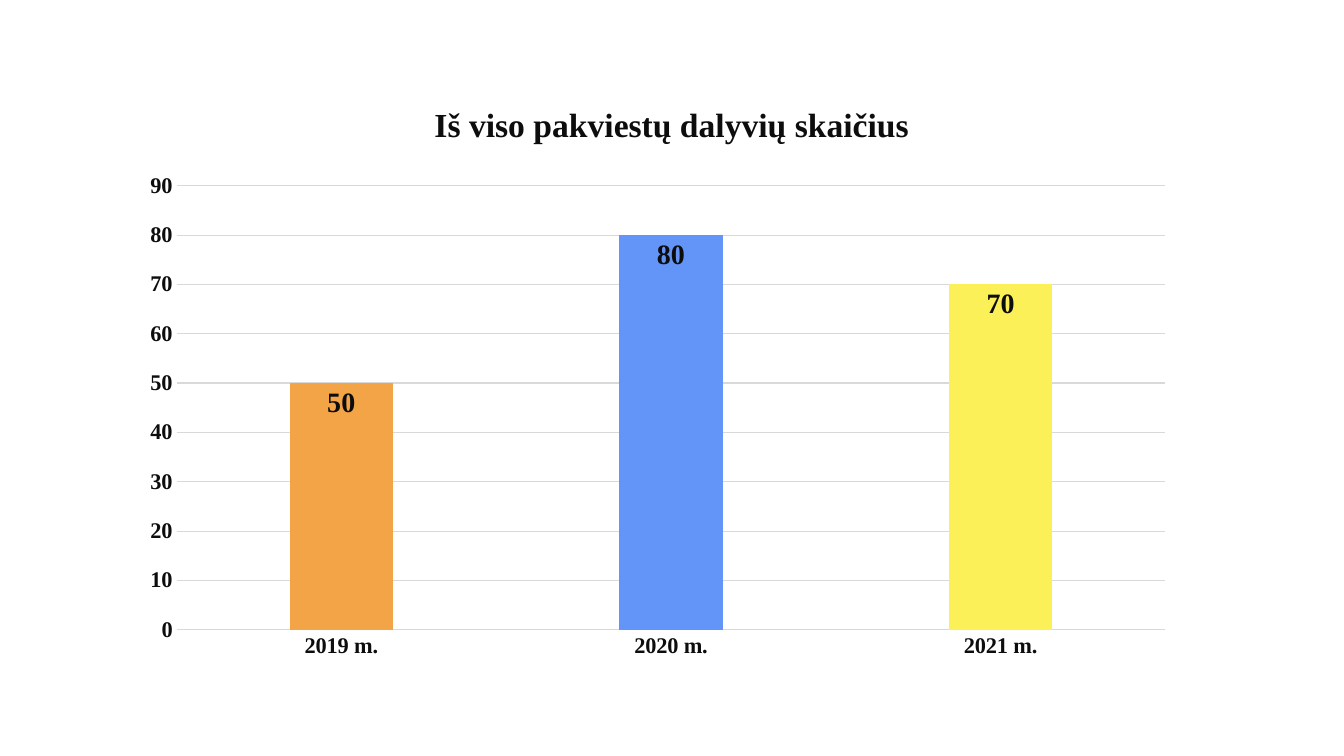
from lxml import etree
from pptx import Presentation
from pptx.chart.data import CategoryChartData
from pptx.dml.color import RGBColor
from pptx.enum.chart import XL_CHART_TYPE, XL_LABEL_POSITION, XL_TICK_MARK
from pptx.oxml.ns import qn
from pptx.util import Cm, Pt

COLUMNS = XL_CHART_TYPE.COLUMN_CLUSTERED
INSIDE_END = XL_LABEL_POSITION.INSIDE_END
NO_TICK = XL_TICK_MARK.NONE

INK = RGBColor(0x0D, 0x0D, 0x0D)
GRID_GREY = RGBColor(0xD9, 0xD9, 0xD9)
ORANGE = RGBColor(0xF3, 0xA4, 0x47)
BLUE = RGBColor(0x63, 0x94, 0xF7)
YELLOW = RGBColor(0xFC, 0xF0, 0x59)


def style_font(font, size):
    font.name = "Times New Roman"
    font.size = Pt(size)
    font.bold = True
    font.color.rgb = INK


def style_line(line):
    line.color.rgb = GRID_GREY
    line.width = Pt(0.75)


presentation = Presentation()
presentation.slide_width = Cm(33.87)
presentation.slide_height = Cm(19.05)
slide = presentation.slides.add_slide(presentation.slide_layouts[6])

participants = CategoryChartData()
participants.categories = ["2019 m.", "2020 m.", "2021 m."]
participants.add_series("Series 1", [50, 80, 70])
chart = slide.shapes.add_chart(
    COLUMNS, Cm(2), Cm(2), Cm(29.85), Cm(15.06), participants
).chart
chart.font.name = "Calibri"
chart.font.size = Pt(10)
chart.has_legend = False

# Title
chart.has_title = True
title = chart.chart_title
title.include_in_layout = False
title.text_frame.text = "Iš viso pakviestų dalyvių skaičius"
style_font(title.text_frame.paragraphs[0].runs[0].font, 24)

# Axes
years = chart.category_axis
counts = chart.value_axis
for axis in (years, counts):
    axis.major_tick_mark = NO_TICK
    axis.minor_tick_mark = NO_TICK
    style_font(axis.tick_labels.font, 16)
style_line(years.format.line)
counts.format.line.fill.background()
counts.minimum_scale = 0
counts.maximum_scale = 90
counts.major_unit = 10
counts.has_major_gridlines = True
style_line(counts.major_gridlines.format.line)

# Columns, one colour per year
columns = chart.plots[0]
columns.gap_width = 219
columns.overlap = -27
columns.vary_by_categories = False
invited = columns.series[0]
invited.format.fill.solid()
invited.format.fill.fore_color.rgb = ORANGE
for index, color in ((1, BLUE), (2, YELLOW)):
    fill = invited.points[index].format.fill
    fill.solid()
    fill.fore_color.rgb = color

labels = invited.data_labels
labels.show_value = True
labels.position = INSIDE_END
style_font(labels.font, 20)

# Place of the inner plot area, as fractions of the chart
plot_area = chart.element.find(".//" + qn("c:plotArea"))
for old_layout in plot_area.findall(qn("c:layout")):
    plot_area.remove(old_layout)
layout = etree.Element(qn("c:layout"))
manual = etree.SubElement(layout, qn("c:manualLayout"))
for tag, value in (
    ("layoutTarget", "inner"), ("xMode", "edge"), ("yMode", "edge"),
    ("x", "0.082"), ("y", "0.178"), ("w", "0.835"), ("h", "0.743"),
):
    etree.SubElement(manual, qn("c:" + tag)).set("val", value)
plot_area.insert(0, layout)

presentation.save("out.pptx")
